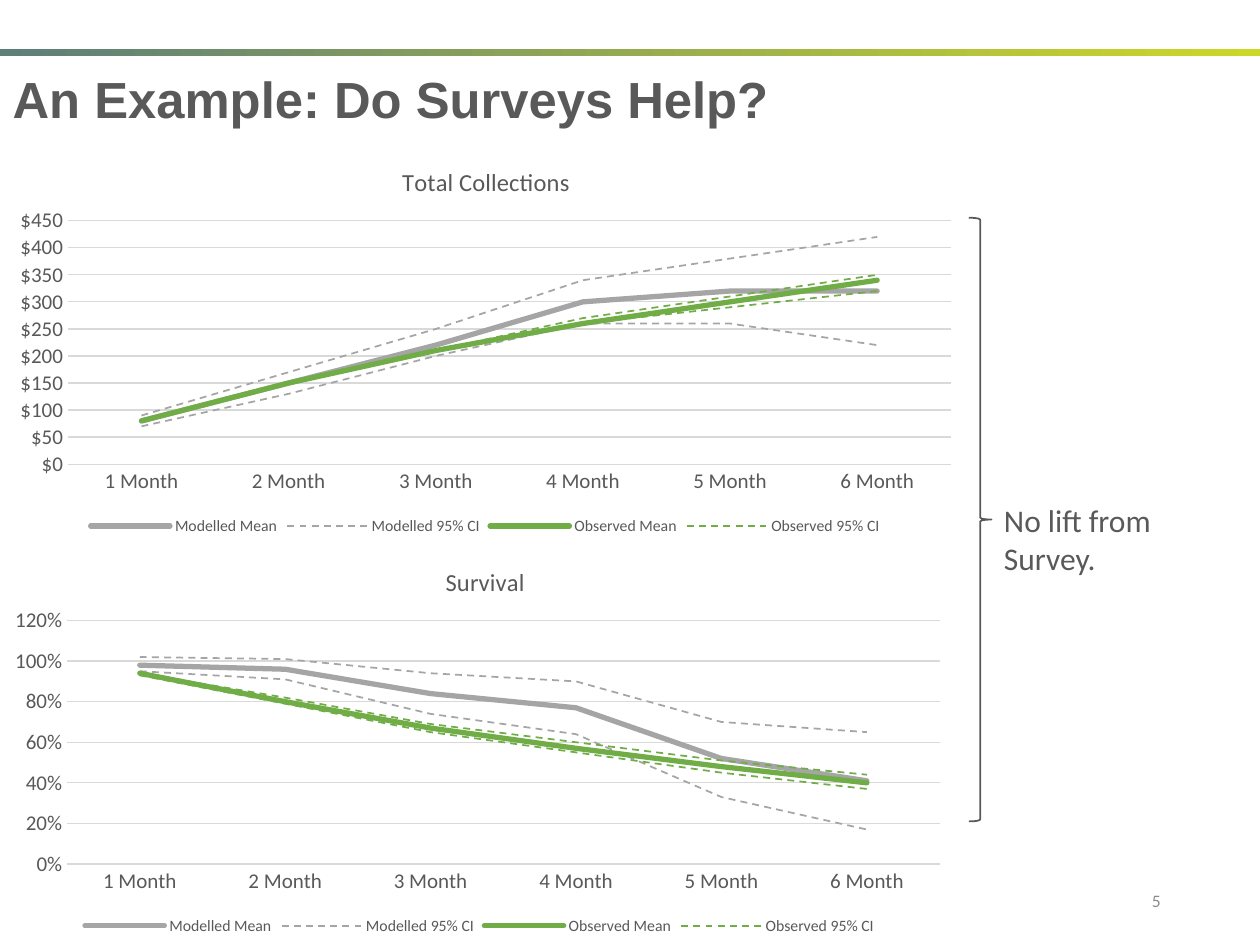
from lxml import etree
from pptx import Presentation
from pptx.chart.data import CategoryChartData
from pptx.dml.color import RGBColor
from pptx.enum.chart import XL_CHART_TYPE, XL_LEGEND_POSITION, XL_TICK_MARK
from pptx.enum.dml import MSO_LINE
from pptx.enum.shapes import MSO_SHAPE
from pptx.enum.text import MSO_ANCHOR, PP_ALIGN
from pptx.oxml import parse_xml
from pptx.oxml.ns import nsdecls, qn
from pptx.util import Cm, Pt

DARK = RGBColor(0x59, 0x59, 0x59)
GREY = RGBColor(0xA5, 0xA5, 0xA5)
GREEN = RGBColor(0x70, 0xAD, 0x47)
GRID = RGBColor(0xD9, 0xD9, 0xD9)
PALE = RGBColor(0x8C, 0x8C, 0x8C)
TEAL = RGBColor(0x5D, 0x7E, 0x79)
LIME = RGBColor(0xCD, 0xD7, 0x28)

# Content
TITLE = "An Example: Do Surveys Help?"
FINDING = "No lift from Survey."
PAGE = "5"
MONTHS = [f"{n} Month" for n in range(1, 7)]
# Name, colour, is a mean line, shown in legend
SERIES = [
    ("Modelled Mean", GREY, True, True),
    ("Modelled 95% CI", GREY, False, True),
    ("Series 3", GREY, False, False),
    ("Observed Mean", GREEN, True, True),
    ("Observed 95% CI", GREEN, False, True),
    ("Series 6", GREEN, False, False),
]
# Boxes in cm; title_at and plot are fractions of the chart
CHARTS = [
    dict(title="Total Collections", box=(0, 2.84, 19.56, 8.05),
         format='"$"#,##0', top=450, step=50,
         title_at=(0.41, 0.05), plot=(0.07, 0.2, 0.91, 0.61),
         values=[(80, 150, 220, 300, 320, 320),
                 (90, 170, 250, 340, 380, 420),
                 (70, 130, 200, 260, 260, 220),
                 (80, 150, 210, 260, 300, 340),
                 (80, 150, 210, 270, 310, 350),
                 (80, 150, 210, 260, 290, 320)]),
    dict(title="Survival", box=(0, 10.9, 19.33, 8.05),
         format="0%", top=1.2, step=0.2,
         title_at=(0.46, 0.05), plot=(0.07, 0.2, 0.91, 0.61),
         values=[(0.98, 0.96, 0.84, 0.77, 0.52, 0.41),
                 (1.02, 1.01, 0.94, 0.9, 0.7, 0.65),
                 (0.95, 0.91, 0.74, 0.64, 0.33, 0.17),
                 (0.94, 0.8, 0.67, 0.57, 0.48, 0.4),
                 (0.93, 0.79, 0.65, 0.55, 0.45, 0.37),
                 (0.94, 0.82, 0.69, 0.6, 0.51, 0.44)]),
]


def cm(box):
    return [Cm(v) for v in box]


def set_font(font, size, color=DARK, name="Calibri", bold=False):
    for key, value in dict(size=Pt(size), name=name, bold=bold).items():
        setattr(font, key, value)
    font.color.rgb = color


def manual_layout(fractions, inner=False):
    """Layout element that places a chart part by fractions of the chart."""
    layout = parse_xml(f"<c:layout {nsdecls('c')}><c:manualLayout/></c:layout>")
    values = [("layoutTarget", "inner")] if inner else []
    values += [("xMode", "edge"), ("yMode", "edge"), *zip("xywh", fractions)]
    for tag, value in values:
        etree.SubElement(layout[0], qn(f"c:{tag}")).set("val", str(value))
    return layout


def replace_layout(parent, layout, index):
    for old in parent.findall(qn("c:layout")):
        parent.remove(old)
    parent.insert(index, layout)


def add_text(slide, box, text, size, color, wrap):
    tf = slide.shapes.add_textbox(*cm(box)).text_frame
    tf.word_wrap = wrap
    p = tf.paragraphs[0]
    r = p.add_run()
    r.text = text
    set_font(r.font, size, color)
    return tf, p


def add_line_chart(slide, c):
    data = CategoryChartData(number_format=c["format"])
    data.categories = MONTHS
    for (name, *_), values in zip(SERIES, c["values"]):
        data.add_series(name, values)
    chart = slide.shapes.add_chart(XL_CHART_TYPE.LINE, *cm(c["box"]), data).chart
    set_font(chart.font, 10)

    # Title and plot position
    tf = chart.chart_title.text_frame
    tf.text = c["title"]
    set_font(tf.paragraphs[0].runs[0].font, 14)
    chart.chart_title.include_in_layout = False
    replace_layout(chart.chart_title._element, manual_layout(c["title_at"]), 1)
    plot_area = chart._chartSpace.chart.plotArea
    replace_layout(plot_area, manual_layout(c["plot"], inner=True), 0)

    # Axes
    cat, val = chart.category_axis, chart.value_axis
    for axis in (cat, val):
        axis.major_tick_mark = axis.minor_tick_mark = XL_TICK_MARK.NONE
        set_font(axis.tick_labels.font, 12)
    val.minimum_scale, val.maximum_scale, val.major_unit = 0, c["top"], c["step"]
    val.tick_labels.number_format = c["format"]
    val.tick_labels.number_format_is_linked = False
    val.format.line.fill.background()
    for line in (cat.format.line, val.major_gridlines.format.line):
        line.color.rgb = GRID
        line.width = Pt(0.75)

    # Legend without the second bound of each interval
    chart.has_legend = True
    legend = chart.legend
    legend.position = XL_LEGEND_POSITION.BOTTOM
    legend.include_in_layout = False
    set_font(legend.font, 9)
    hidden = [i for i, entry in enumerate(SERIES) if not entry[3]]
    for place, i in enumerate(hidden, 1):
        legend._element.insert(place, parse_xml(
            f'<c:legendEntry {nsdecls("c")}><c:idx val="{i}"/>'
            '<c:delete val="1"/></c:legendEntry>'))

    # Lines
    for s, (_, color, is_mean, _) in zip(chart.plots[0].series, SERIES):
        s.smooth = False
        line = s.format.line
        line.color.rgb = color
        line.width = Pt(3 if is_mean else 1)
        if is_mean:
            line._get_or_add_ln().set("cap", "rnd")
        else:
            line.dash_style = MSO_LINE.DASH


def main():
    prs = Presentation()
    prs.slide_width, prs.slide_height = Cm(25.4), Cm(19.05)
    slide = prs.slides.add_slide(prs.slide_layouts[5])

    # Gradient band
    band = slide.shapes.add_shape(MSO_SHAPE.RECTANGLE, *cm((0, 0.99, 25.4, 0.15)))
    band.shadow.inherit = False
    band.line.fill.background()
    band.fill.gradient()
    band.fill.gradient_angle = 0
    for stop, color, position in zip(band.fill.gradient_stops, (TEAL, LIME), (0, 1)):
        stop.color.rgb = color
        stop.position = position

    # Title
    title = slide.shapes.title
    title.left, title.top, title.width, title.height = cm((0, 1.27, 24.03, 1.57))
    tf = title.text_frame
    tf.text = TITLE
    tf.vertical_anchor = MSO_ANCHOR.MIDDLE
    p = tf.paragraphs[0]
    p.alignment, p.line_spacing = PP_ALIGN.LEFT, 0.9
    set_font(p.runs[0].font, 29, name="Arial", bold=True)

    for c in CHARTS:
        add_line_chart(slide, c)

    # Finding beside both charts
    add_text(slide, (19.99, 9.98, 5.41, 1.02), FINDING, 18, DARK, wrap=False)
    brace = slide.shapes.add_shape(MSO_SHAPE.RIGHT_BRACE,
                                   *cm((19.53, 4.39, 0.46, 12.17)))
    brace.shadow.inherit = False
    brace.fill.background()
    brace.line.color.rgb = DARK
    brace.line.width = Pt(1)

    # Page number
    tf, p = add_text(slide, (17.93, 17.65, 5.72, 1.02), PAGE, 10, PALE, wrap=True)
    tf.vertical_anchor = MSO_ANCHOR.MIDDLE
    p.alignment = PP_ALIGN.RIGHT

    prs.save("out.pptx")


if __name__ == "__main__":
    main()
